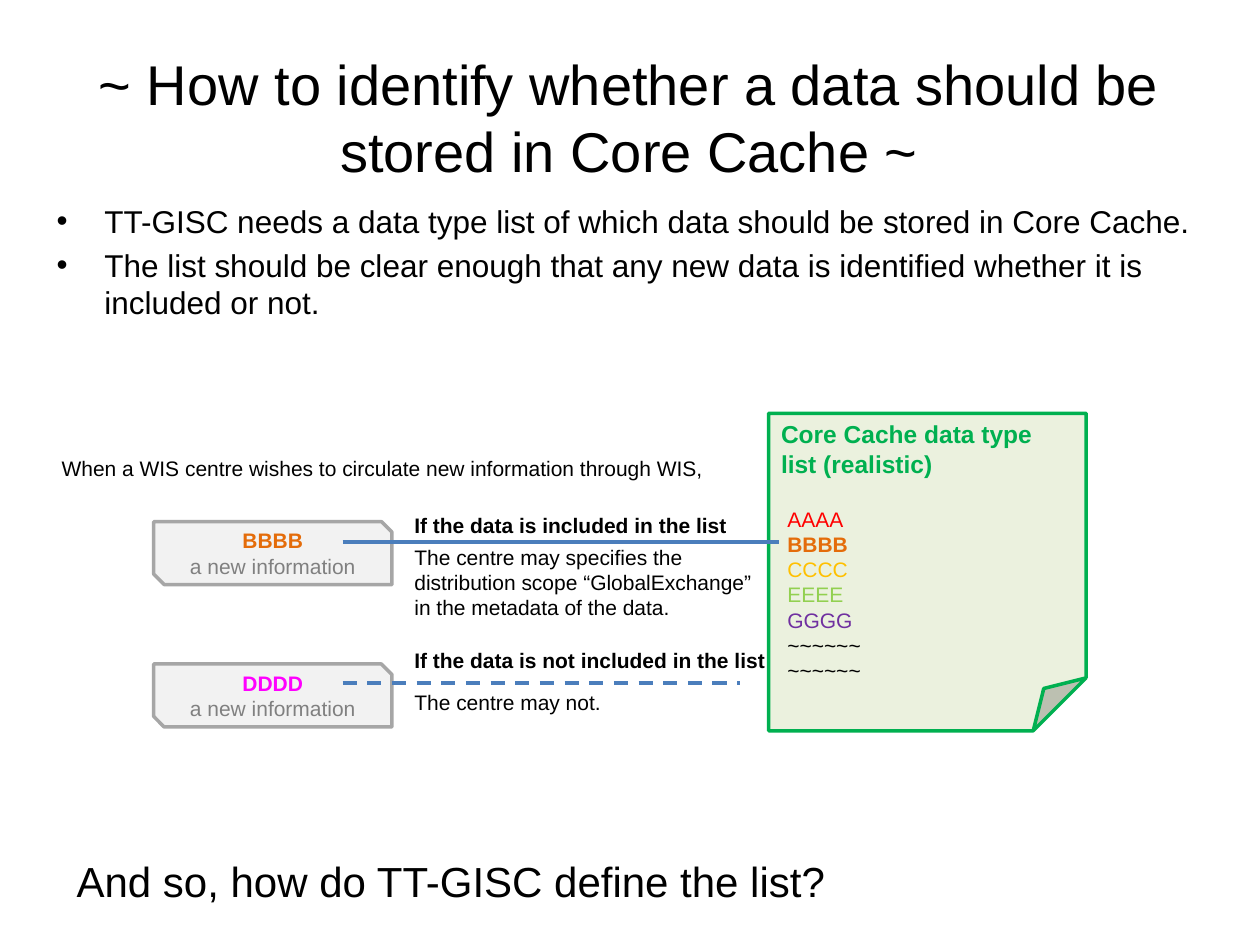
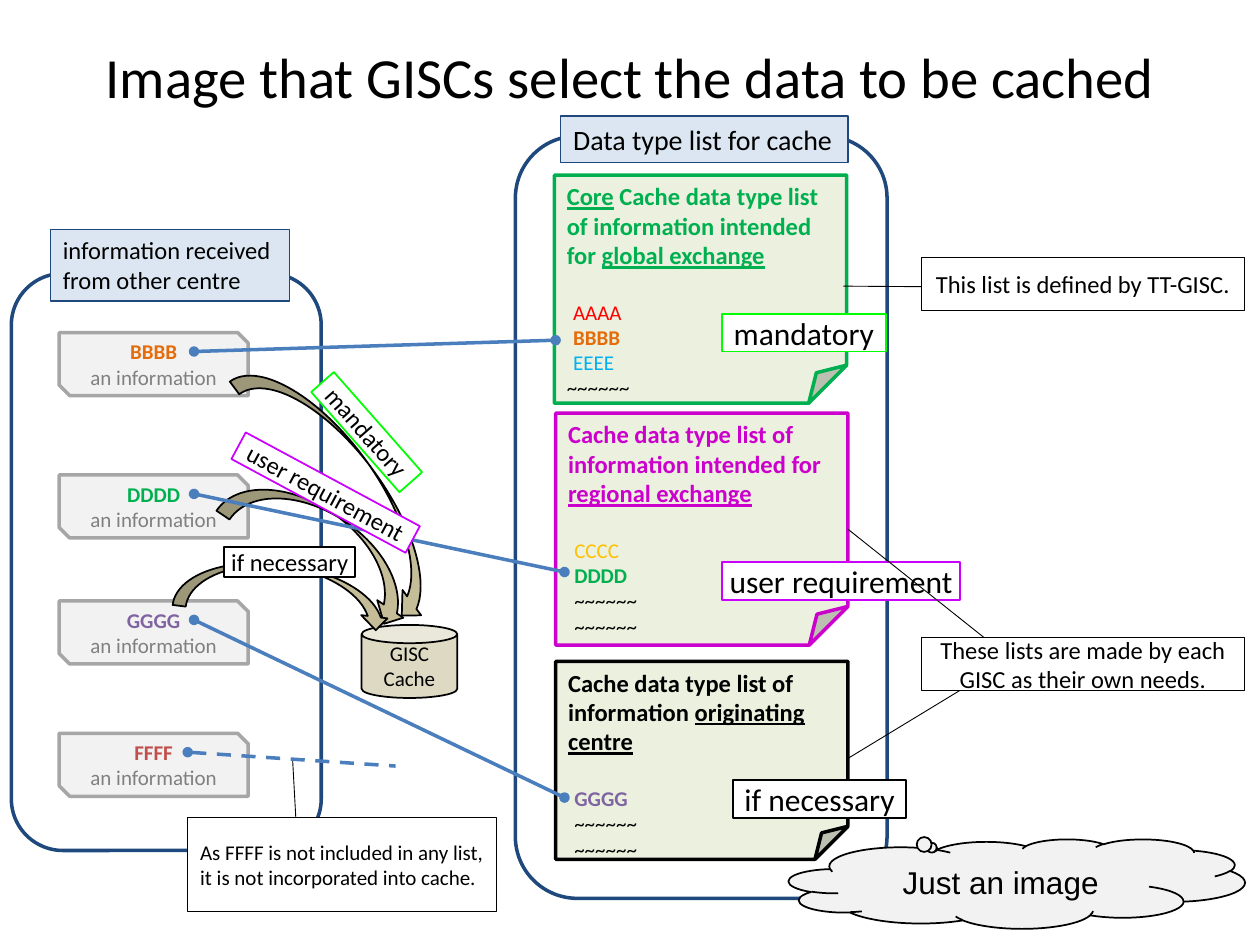
from dataclasses import dataclass
from typing import Optional, Sequence

from lxml import etree
from pptx import Presentation
from pptx import util as u
from pptx.dml.color import RGBColor
from pptx.enum import dml, shapes, text
from pptx.oxml import ns

SCALE = 9144  # EMU in one px, 100 px to the inch
Kind = shapes.MSO_SHAPE
Align = text.PP_ALIGN
Anchor = text.MSO_ANCHOR


@dataclass(frozen=True)
class Theme:
    arial: str = "Arial"
    calibri: str = "Calibri"
    black: str = "000000"
    white: str = "FFFFFF"
    gray_text: str = "808080"
    gray_line: str = "A6A6A6"
    gray_fill: str = "F2F2F2"
    paper: str = "EBF1DE"
    navy: str = "1F497D"
    sky: str = "DCE6F2"
    link: str = "4B7EBC"
    can: str = "DDD9C3"
    arrow: str = "C4BD97"
    green: str = "00B050"
    magenta: str = "CC00CC"
    lime: str = "00FF00"
    violet: str = "CC00FF"
    pink: str = "FF00FF"
    red: str = "FF0000"
    orange: str = "E46C0A"
    amber: str = "FFC000"
    leaf: str = "92D050"
    cyan: str = "00B0F0"
    indigo: str = "7030A0"
    purple: str = "8064A2"
    brick: str = "C0504D"
    title: float = 32
    wide_title: float = 32.4
    question: float = 24
    body: float = 18
    header: float = 16
    heading: float = 14
    small: float = 12
    thick: float = 2
    medium: float = 1
    thin: float = 0.75
    hair: float = 0.5


T = Theme()


@dataclass(frozen=True)
class Rect:
    left: int
    top: int
    width: int
    height: int

    def emu(self) -> list:
        return [px(n) for n in (self.left, self.top, self.width, self.height)]


@dataclass(frozen=True)
class Para:
    """Text of one paragraph; parts between underscores are underlined."""
    text: str
    size: float = T.small
    color: str = T.black
    bold: bool = False
    indent: int = 0
    before: float = 0


@dataclass(frozen=True)
class Look:
    fill: str
    line: str
    width: float


@dataclass(frozen=True)
class Item:
    text: str
    color: str = T.black
    bold: bool = False
    indent: int = 5


@dataclass(frozen=True)
class TypeList:
    rect: Rect
    heading: str
    color: str
    items: Sequence[Item]


@dataclass(frozen=True)
class Link:
    start: tuple
    end: tuple
    dashed: bool = False
    ends: Sequence[str] = ()


@dataclass(frozen=True)
class Label:
    rect: Rect
    text: str
    line: str
    size: float = T.body
    turn: float = 0


@dataclass(frozen=True)
class Callout:
    rect: Rect
    text: str
    adjust: Sequence[float]
    size: float = T.heading
    align: Align = Align.CENTER


PANEL = Look(T.white, T.navy, T.thick)
HEADER = Look(T.sky, T.navy, T.thin)
CARD = Look(T.gray_fill, T.gray_line, T.thick)
NOTE = Look(T.white, T.black, T.hair)
TILDES = Item("~~~~~~")


def px(n: int) -> u.Emu:
    return u.Emu(n * SCALE)


def rgb(color: str) -> RGBColor:
    return RGBColor.from_string(color)


def put_text(shape, paras: Sequence[Para], font=T.calibri, align=Align.LEFT,
             anchor=Anchor.TOP, inset=(10, 5)):
    frame = shape.text_frame
    frame.word_wrap = True
    frame.auto_size = text.MSO_AUTO_SIZE.NONE
    frame.vertical_anchor = anchor
    frame.margin_left = frame.margin_right = px(inset[0])
    frame.margin_top = frame.margin_bottom = px(inset[1])
    for number, item in enumerate(paras):
        para = frame.add_paragraph() if number else frame.paragraphs[0]
        para.alignment = align
        para.space_before = u.Pt(item.before)
        para.font.name, para.font.size = font, u.Pt(item.size)
        para.font.bold, para.font.color.rgb = item.bold, rgb(item.color)
        if item.indent:
            para._p.get_or_add_pPr().set("marL", str(px(item.indent)))
        for part, words in enumerate(item.text.split("_")):
            if words:
                span = para.add_run()
                span.text = words
                if part % 2:
                    span.font.underline = True


def add_title(page, rect: Rect, words: str, size: float, font: str):
    title = page.shapes.title
    title.left, title.top, title.width, title.height = rect.emu()
    put_text(title, [Para(words, size)], font, Align.CENTER, Anchor.MIDDLE)


def add_box(page, kind, rect: Rect, look: Look, adjust: Sequence[float] = ()):
    box = page.shapes.add_shape(kind, *rect.emu())
    box.shadow.inherit = False
    box.fill.solid()
    box.fill.fore_color.rgb = rgb(look.fill)
    box.line.color.rgb = rgb(look.line)
    box.line.width = u.Pt(look.width)
    for number, value in enumerate(adjust):
        box.adjustments[number] = value
    return box


def add_words(page, rect: Rect, *paras: Para):
    box = page.shapes.add_textbox(*rect.emu())
    put_text(box, paras, T.arial)
    return box


def add_bullets(box, hang: int):
    for para in box.text_frame.paragraphs:
        props = para._p.get_or_add_pPr()
        props.set("marL", str(px(hang)))
        props.set("indent", str(px(-hang)))
        etree.SubElement(props, ns.qn("a:buFont")).set("typeface", T.arial)
        etree.SubElement(props, ns.qn("a:buChar")).set("char", "•")


def add_type_list(page, data: TypeList, font: str, gap: float):
    """Draw a folded sheet; gap is the space in points under its heading."""
    sheet = add_box(page, Kind.FOLDED_CORNER, data.rect, Look(T.paper, data.color, T.thick))
    paras = [Para(data.heading, T.heading, data.color, True)]
    for number, item in enumerate(data.items):
        paras.append(Para(item.text, T.small, item.color, item.bold, item.indent,
                          0 if number else gap))
    put_text(sheet, paras, font)
    return sheet


def add_card(page, rect: Rect, name: str, color: str, caption: str, font: str):
    card = add_box(page, Kind.SNIP_2_DIAG_RECTANGLE, rect, CARD)
    put_text(card, [Para(name, color=color, bold=True), Para(caption, color=T.gray_text)],
             font, Align.CENTER, Anchor.MIDDLE)


def add_line(page, link: Link, color=T.link, width=T.thick):
    line = page.shapes.add_connector(shapes.MSO_CONNECTOR.STRAIGHT,
                                     *[px(n) for n in link.start + link.end])
    line.line.color.rgb = rgb(color)
    line.line.width = u.Pt(width)
    if link.dashed:
        line.line.dash_style = dml.MSO_LINE.DASH
    props = line.element.spPr
    for end in link.ends:
        etree.SubElement(props.find(ns.qn("a:ln")), ns.qn("a:" + end)).set("type", "oval")
    etree.SubElement(props, ns.qn("a:effectLst"))
    return line


def add_label(page, label: Label):
    box = add_box(page, Kind.RECTANGLE, label.rect, Look(T.white, label.line, T.medium))
    box.rotation = label.turn
    put_text(box, [Para(label.text, label.size)], align=Align.CENTER, inset=(4, 0))


def add_callout(page, note: Callout):
    box = add_box(page, Kind.LINE_CALLOUT_1, note.rect, NOTE, note.adjust)
    put_text(box, [Para(note.text, note.size)], align=note.align, anchor=Anchor.MIDDLE)


def build_identify_page(page):
    add_title(page, Rect(35, 30, 929, 125),
              "~ How to identify whether a data should be stored in Core Cache ~", T.title, T.arial)
    points = ("TT-GISC needs a data type list of which data should be stored in Core Cache.",
              "The list should be clear enough that any new data is identified whether it is "
              "included or not.")
    add_bullets(add_words(page, Rect(35, 155, 929, 515),
                          *[Para(point, T.body, before=3.6) for point in points]), 38)
    items = (Item("AAAA", T.red), Item("BBBB", T.orange, True), Item("CCCC", T.amber),
             Item("EEEE", T.leaf), Item("GGGG", T.indigo), TILDES, TILDES)
    add_type_list(page, TypeList(Rect(610, 328, 252, 252), "Core Cache data type list (realistic)",
                                 T.green, items), T.arial, 16)
    add_words(page, Rect(51, 674, 882, 50),
              Para("And so, how do TT-GISC define the list?", T.question))
    add_words(page, Rect(39, 357, 618, 30),
              Para("When a WIS centre wishes to circulate new information through WIS,"))
    for top, name, color in ((414, "BBBB", T.orange), (527, "DDDD", T.pink)):
        add_card(page, Rect(122, top, 189, 50), name, color, "a new information", T.arial)
    add_line(page, Link((272, 542), (587, 542), dashed=True))
    add_line(page, Link((272, 430), (618, 430)))
    add_words(page, Rect(319, 402, 283, 30), Para("If the data is included in the list", bold=True))
    add_words(page, Rect(319, 509, 307, 30),
              Para("If the data is not included in the list", bold=True))
    add_words(page, Rect(319, 427, 291, 71),
              Para("The centre may specifies the distribution scope “GlobalExchange” "
                   "in the metadata of the data."))
    add_words(page, Rect(319, 542, 291, 30), Para("The centre may not."))


def build_selection_page(page):
    add_title(page, Rect(50, 21, 900, 78), "Image that GISCs select the data to be cached",
              T.wide_title, T.calibri)
    for rect in (Rect(409, 108, 295, 605), Rect(9, 217, 246, 458)):
        add_box(page, Kind.ROUNDED_RECTANGLE, rect, PANEL)

    type_lists = (
        TypeList(Rect(440, 139, 232, 181),
                 "_Core_ Cache data type list of information intended for _global exchange_", T.green,
                 (Item("AAAA", T.red), Item("BBBB", T.orange, True), Item("EEEE", T.cyan),
                  Item("~~~~~~", indent=0))),
        TypeList(Rect(441, 328, 232, 184),
                 "Cache data type list of information intended for _regional exchange_", T.magenta,
                 (Item("CCCC", T.amber), Item("DDDD", T.green, True), TILDES, TILDES)),
        TypeList(Rect(441, 525, 232, 157),
                 "Cache data type list of information _originating centre_", T.black,
                 (Item("GGGG", T.purple, True), TILDES, TILDES)))
    core, regional, centre = [add_type_list(page, data, T.calibri, 17) for data in type_lists]
    for label in (Label(Rect(573, 249, 130, 30), "mandatory", T.lime),
                  Label(Rect(573, 446, 189, 30), "user requirement", T.violet),
                  Label(Rect(582, 619, 137, 30), "if necessary", T.black)):
        add_label(page, label)

    for rect, words, size in (
            (Rect(40, 182, 190, 57), "information received from other centre", T.heading),
            (Rect(445, 92, 228, 37), "Data type list for cache", T.header)):
        put_text(add_box(page, Kind.RECTANGLE, rect, HEADER), [Para(words, size)])
    for top, name, color in ((264, "BBBB", T.orange), (377, "DDDD", T.green),
                             (477, "GGGG", T.purple), (582, "FFFF", T.brick)):
        add_card(page, Rect(47, top, 150, 50), name, color, "an information", T.calibri)

    for note in (
            Callout(Rect(731, 506, 257, 42), "These lists are made by each GISC as their own needs.",
                    (1, 0.12, 2.3, -0.23)),
            Callout(Rect(731, 204, 257, 42), "This list is defined by TT-GISC.",
                    (0.56, 0, 0.55, -0.24)),
            Callout(Rect(149, 649, 245, 74),
                    "As FFFF is not included in any list, it is not incorporated into cache.",
                    (0, 0.35, -0.61, 0.34), T.small, Align.LEFT)):
        add_callout(page, note)
    add_line(page, Link((673, 420), (781, 506)), T.black, T.hair).begin_connect(regional, 3)

    can = add_box(page, Kind.CAN, Rect(287, 496, 76, 58), Look(T.can, T.black, T.medium))
    put_text(can, [Para("GISC Cache")], align=Align.CENTER, anchor=Anchor.MIDDLE)
    for rect, turn in ((Rect(153, 361, 243, 50), 53.7), (Rect(171, 408, 173, 50), 34),
                       (Rect(139, 449, 173, 42), 7.1)):
        arrow = add_box(page, Kind.CURVED_DOWN_ARROW, rect, Look(T.arrow, T.black, T.medium))
        arrow.rotation = turn

    both = ("headEnd", "tailEnd")
    for link in (Link((154, 279), (441, 270), ends=both), Link((154, 392), (448, 454), ends=both),
                 Link((154, 492), (448, 633), ends=both),
                 Link((149, 597), (314, 608), dashed=True, ends=both[:1])):
        add_line(page, link)
    for label in (Label(Rect(238, 331, 106, 24), "mandatory", T.lime, T.heading, 48.6),
                  Label(Rect(180, 379, 157, 24), "user requirement", T.violet, T.heading, 28.3),
                  Label(Rect(178, 434, 104, 24), "if necessary", T.black, T.heading)):
        add_label(page, label)

    cloud = add_box(page, Kind.CLOUD_CALLOUT, Rect(626, 666, 362, 71),
                    Look(T.gray_fill, T.black, T.medium), (-0.18, -0.39))
    put_text(cloud, [Para("Just an image", T.body)], T.arial, Align.CENTER, Anchor.MIDDLE)


def main():
    deck = Presentation()
    deck.slide_width, deck.slide_height = px(1000), px(750)
    title_only = deck.slide_layouts[5]
    for build in (build_identify_page, build_selection_page):
        build(deck.slides.add_slide(title_only))
    deck.save("out.pptx")


if __name__ == "__main__":
    main()
